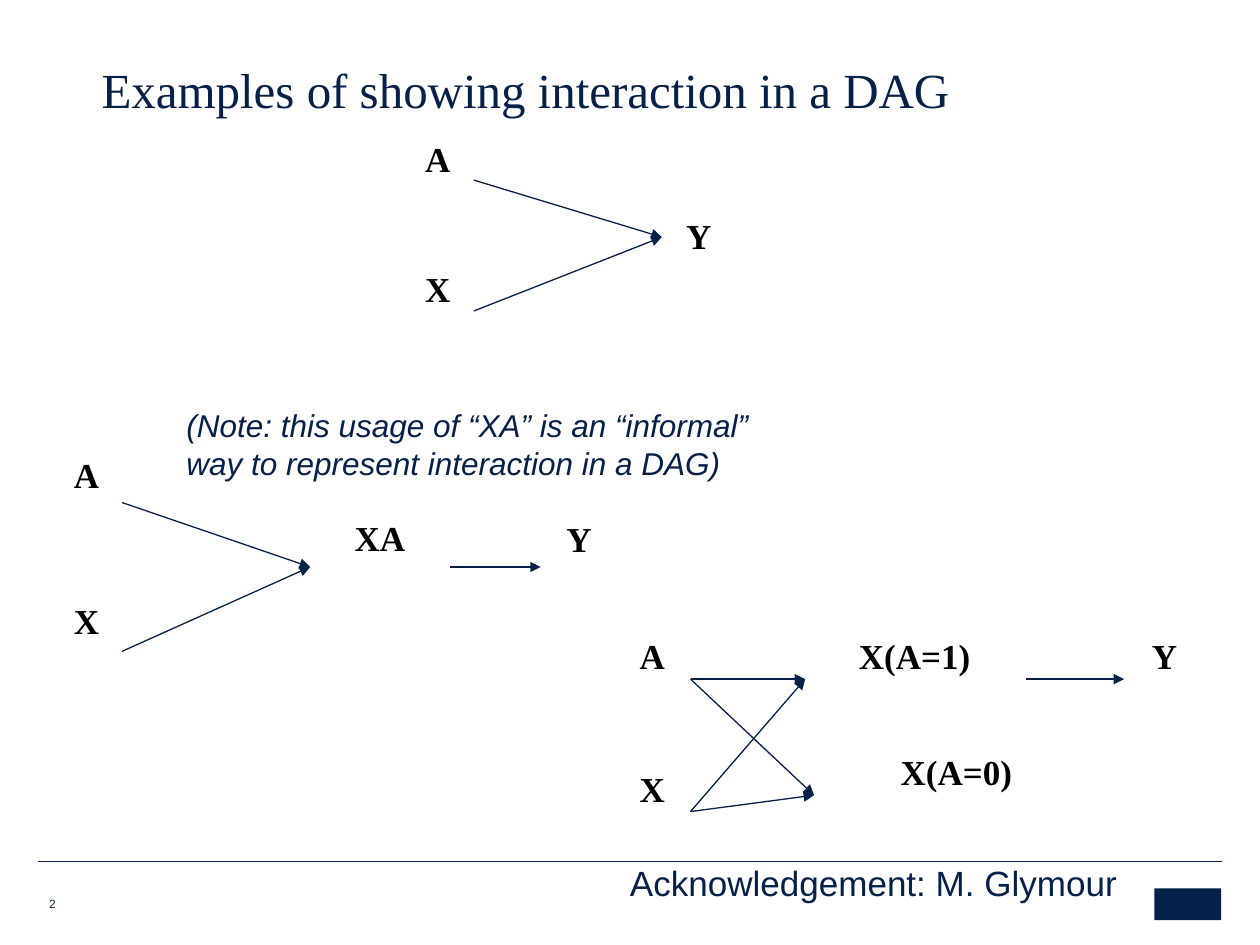
"""Build a slide of three causal diagrams that show interaction in a DAG."""
from dataclasses import dataclass

from lxml.etree import SubElement
from pptx import Presentation
from pptx.dml.color import RGBColor
from pptx.enum.shapes import MSO_CONNECTOR, MSO_SHAPE
from pptx.enum.text import MSO_ANCHOR, PP_ALIGN
from pptx.oxml.ns import qn
from pptx.util import Cm, Pt


@dataclass(frozen=True)
class Theme:
    navy: RGBColor = RGBColor(0x05, 0x20, 0x49)
    black: RGBColor = RGBColor(0, 0, 0)
    serif: str = "Times New Roman"
    sans: str = "Arial"
    title: float = 28
    node: float = 20
    note: float = 18
    number: float = 6.8
    arrow: float = 0.75
    rule: float = 0.25


theme = Theme()


def add_text(page, text, place, size, name, color, inset=0.0, anchor=MSO_ANCHOR.TOP):
    box = page.shapes.add_textbox(*map(Cm, place))
    frame = box.text_frame
    frame.word_wrap = True
    frame.vertical_anchor = anchor
    frame.margin_left = frame.margin_right = Cm(inset)
    frame.margin_top = frame.margin_bottom = Cm(inset / 2)
    para = frame.paragraphs[0]
    para.text = text
    para.font.size = Pt(size)
    para.font.name = name
    para.font.color.rgb = color
    return para


def add_line(page, ends, width, arrow=False):
    line = page.shapes.add_connector(MSO_CONNECTOR.STRAIGHT, *map(Cm, ends))
    line.line.color.rgb = theme.navy
    line.line.width = Pt(width)
    properties = line._element.spPr
    if arrow:
        SubElement(properties.find(qn("a:ln")), qn("a:tailEnd"), type="triangle")
    SubElement(properties, qn("a:effectLst"))


deck = Presentation()
deck.slide_width, deck.slide_height = Cm(25.4), Cm(19.05)
page = deck.slides.add_slide(deck.slide_layouts[6])

for rule_left in (1.02, 0.76):
    add_line(page, (rule_left, 17.37, 25.4 - rule_left, 17.37), theme.rule)

emblem = page.shapes.add_shape(MSO_SHAPE.RECTANGLE, Cm(23.27), Cm(17.91), Cm(1.35), Cm(0.64))
emblem.shadow.inherit = False
emblem.fill.solid()
emblem.fill.fore_color.rgb = theme.navy
emblem.line.fill.background()

title = add_text(page, "Examples of showing interaction in a DAG", (1.8, 1.22, 22.48, 1.3),
                 theme.title, theme.serif, theme.navy, 0.25, MSO_ANCHOR.BOTTOM)
title.line_spacing = 0.85
add_text(page, "2", (0.99, 17.93, 0.69, 0.43), theme.number, theme.sans, theme.navy,
         anchor=MSO_ANCHOR.BOTTOM)
note = add_text(page, "(Note: this usage of “XA” is an “informal” way to represent interaction in a DAG)",
                (3.76, 8.18, 11.89, 1.55), theme.note, theme.sans, theme.navy)
note.font.italic = True
add_text(page, "Acknowledgement: M. Glymour", (12.7, 17.37, 10.29, 0.86),
         theme.node, theme.sans, theme.navy)

simple_nodes = [
    ("A", 8.1, 2.64, 1.45, 1.96),
    ("Y", 13.31, 4.19, 1.55, 1.96),
    ("X", 8.1, 5.26, 1.45, 1.96),
]
simple_arrows = [(9.55, start, 13.34, 4.78) for start in (6.27, 3.63)]

product_nodes = [
    ("A", 1.02, 9.02, 1.45, 2.25),
    ("Y", 10.9, 10.31, 1.55, 2.25),
    ("XA", 6.25, 10.29, 2.82, 2.25),
    ("X", 1.02, 11.96, 1.45, 2.25),
]
product_arrows = [(2.46, start, 6.25, 11.43) for start in (13.13, 10.13)]
product_arrows.append((9.07, 11.43, 10.9, 11.43))

stratum_nodes = [
    ("A", 12.4, 12.67, 1.5, 2.05),
    ("Y", 22.66, 12.67, 1.63, 2.05),
    ("X(A=1)", 16.23, 12.67, 4.42, 2.05),
    ("X", 12.4, 15.34, 1.5, 2.05),
    ("X(A=0)", 16.41, 15.01, 5.74, 2.05),
]
stratum_arrows = [(13.92, start, *end) for start in (16.36, 13.69)
                  for end in ((16.23, 13.69), (16.41, 16.03))]
stratum_arrows.append((20.68, 13.69, 22.66, 13.69))

diagrams = [
    (simple_nodes, simple_arrows),
    (product_nodes, product_arrows),
    (stratum_nodes, stratum_arrows),
]
for nodes, arrows in diagrams:
    for label, *place in nodes:
        para = add_text(page, label, place, theme.node, theme.serif, theme.black, 0.25)
        para.alignment = PP_ALIGN.CENTER
        para.font.bold = True
    for ends in arrows:
        add_line(page, ends, theme.arrow, arrow=True)

deck.save("out.pptx")
